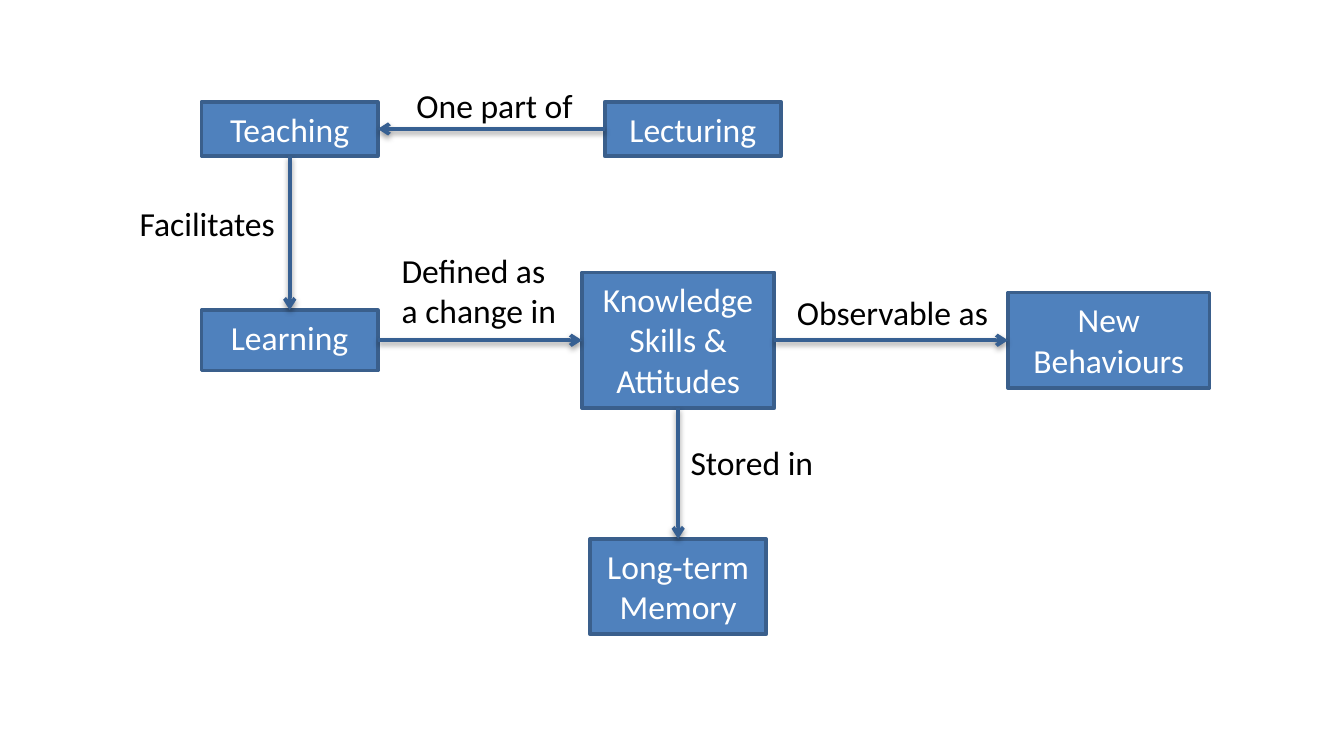
from lxml import etree
from pptx import Presentation
from pptx.dml.color import RGBColor
from pptx.enum import shapes, text
from pptx.oxml import ns
from pptx.util import Pt

THEME = dict(font="Calibri", size=18, fill="4F81BD", edge="3A5F8C",
             arrow="376092", light="FFFFFF", dark="000000", line=2)
COL = dict(left=155.2, mid=363.3, lect=371.2, right=594)
ROW = dict(top=69.1, mid=182.3, low=314.3)

BOXES = {
    "Learning": ("left", "mid", 94.4, 32.4),
    "Teaching": ("left", "top", 94.4, 29.1),
    "Long-term Memory": ("mid", "low", 94.4, 51.1),
    "Knowledge Skills & Attitudes": ("mid", "mid", 103, 72.7),
    "New Behaviours": ("right", "mid", 108, 51.1),
    "Lecturing": ("lect", "top", 94.4, 29.1),
}
SITE = dict(top=0, left=1, bottom=2, right=3)
LINKS = [
    ("Teaching", "bottom", "Learning", "top"),
    ("Learning", "right", "Knowledge Skills & Attitudes", "left"),
    ("Knowledge Skills & Attitudes", "bottom", "Long-term Memory", "top"),
    ("Knowledge Skills & Attitudes", "right", "New Behaviours", "left"),
    ("Lecturing", "left", "Teaching", "right"),
]
LABELS = [
    (["Facilitates"], 67.7, 105.1, 87.8, 29.1),
    (["Defined as", "a change in"], 208.1, 130.3, 98.6, 51.1),
    (["Stored in"], 362.9, 233.3, 81.4, 29.1),
    (["Observable as"], 419.8, 152.6, 118.1, 29.1),
    (["One part of"], 216, 41.8, 99.4, 29.1),
]


def rgb(key):
    return RGBColor.from_string(THEME[key])


def write(shape, lines, color="dark", align=text.PP_ALIGN.LEFT, wrap=False):
    frame = shape.text_frame
    frame.word_wrap = wrap
    frame.auto_size = text.MSO_AUTO_SIZE.SHAPE_TO_FIT_TEXT
    frame.vertical_anchor = text.MSO_ANCHOR.TOP
    frame.text = "\n".join(lines)
    for para in frame.paragraphs:
        para.alignment = align
        font = para.runs[0].font
        font.name, font.size = THEME["font"], Pt(THEME["size"])
        font.color.rgb = rgb(color)


def add_box(slide, name, col, row, wide, high):
    box = slide.shapes.add_shape(
        shapes.MSO_SHAPE.RECTANGLE, Pt(COL[col] - wide / 2),
        Pt(ROW[row] - high / 2), Pt(wide), Pt(high))
    box.shadow.inherit = False
    box.fill.solid()
    box.fill.fore_color.rgb = rgb("fill")
    box.line.color.rgb = rgb("edge")
    box.line.width = Pt(THEME["line"])
    write(box, [name], color="light", align=text.PP_ALIGN.CENTER, wrap=True)
    return box


def add_link(slide, start, out, end, into):
    link = slide.shapes.add_connector(shapes.MSO_CONNECTOR.STRAIGHT, 0, 0, 0, 0)
    link.begin_connect(start, SITE[out])
    link.end_connect(end, SITE[into])
    link.line.color.rgb = rgb("arrow")
    link.line.width = Pt(THEME["line"])
    etree.SubElement(link.line._get_or_add_ln(), ns.qn("a:tailEnd"), type="arrow")
    props = link._element.spPr
    effects = etree.SubElement(props, ns.qn("a:effectLst"))
    shade = etree.SubElement(effects, ns.qn("a:outerShdw"), blurRad=str(Pt(3.1)),
                             dist=str(Pt(1.6)), dir="5400000", rotWithShape="0")
    tint = etree.SubElement(shade, ns.qn("a:srgbClr"), val=THEME["dark"])
    etree.SubElement(tint, ns.qn("a:alpha"), val="38000")


def main():
    deck = Presentation()
    deck.slide_width, deck.slide_height = Pt(720), Pt(405)
    slide = deck.slides.add_slide(deck.slide_layouts[6])
    boxes = {name: add_box(slide, name, *spot) for name, spot in BOXES.items()}
    for start, out, end, into in LINKS:
        add_link(slide, boxes[start], out, boxes[end], into)
    for lines, *spot in LABELS:
        write(slide.shapes.add_textbox(*map(Pt, spot)), lines)
    deck.save("out.pptx")


if __name__ == "__main__":
    main()
